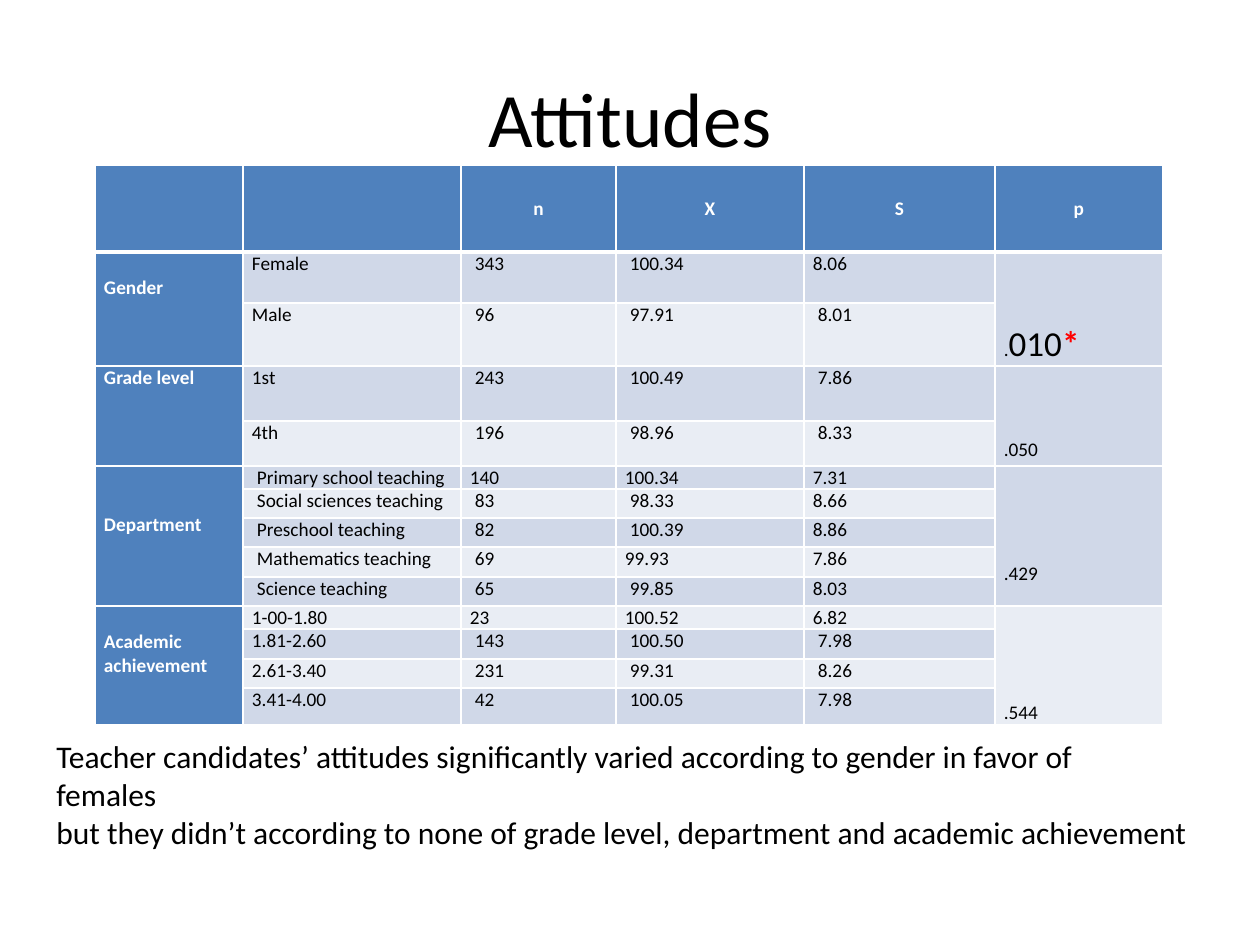
from typing import NamedTuple

from lxml.etree import SubElement
from pptx import Presentation
from pptx.dml.color import RGBColor
from pptx.enum.text import MSO_ANCHOR as Anchor, PP_ALIGN as Align
from pptx.oxml.ns import qn
from pptx.util import Emu, Pt

PX_PER_INCH = 126
FONT = "Calibri"
BLACK, WHITE, RED = "000000", "FFFFFF", "FF0000"
HEADER_BLUE, BAND_DARK, BAND_LIGHT = "4F81BD", "D0D8E8", "E9EDF4"
CELL_MARGIN, INDENT = 9, 5

COLUMN_WIDTHS = [148, 218, 155, 188, 191, 168]
ROW_HEIGHTS = [87, 51, 63, 55, 45, 23, 29, 29, 30, 29, 23, 30, 29, 37]
HEADINGS = ["", "", "n", "X", "S", "p"]


class Run(NamedTuple):
    text: str
    size: int = 11
    color: str = BLACK
    bold: bool = False


class Entry(NamedTuple):
    """One data row; indented lists the positions of the values set in a little."""
    values: tuple
    indented: tuple


class Group(NamedTuple):
    label: str
    label_top: int
    p_value: list
    p_bottom: int
    entries: list


GROUPS = [
    Group("Gender", 24, [Run("."), Run("010", 20), Run("*", 20, RED, True)], 0, [
        Entry(("Female", "343", "100.34", "8.06"), (1, 2)),
        Entry(("Male", "96", "97.91", "8.01"), (1, 2, 3)),
    ]),
    Group("Grade level", 0, [Run(".050")], 4, [
        Entry(("1st", "243", "100.49", "7.86"), (1, 2, 3)),
        Entry(("4th", "196", "98.96", "8.33"), (1, 2, 3)),
    ]),
    Group("Department", 47, [Run(".429")], 20, [
        Entry(("Primary school teaching", "140", "100.34", "7.31"), (0,)),
        Entry(("Social sciences teaching", "83", "98.33", "8.66"), (0, 1, 2)),
        Entry(("Preschool teaching", "82", "100.39", "8.86"), (0, 1, 2)),
        Entry(("Mathematics teaching", "69", "99.93", "7.86"), (0, 1)),
        Entry(("Science teaching", "65", "99.85", "8.03"), (0, 1, 2)),
    ]),
    Group("Academic achievement", 24, [Run(".544")], 0, [
        Entry(("1-00-1.80", "23", "100.52", "6.82"), ()),
        Entry(("1.81-2.60", "143", "100.50", "7.98"), (1, 2, 3)),
        Entry(("2.61-3.40", "231", "99.31", "8.26"), (1, 2, 3)),
        Entry(("3.41-4.00", "42", "100.05", "7.98"), (1, 2, 3)),
    ]),
]

CONCLUSION = [
    "Teacher candidates’ attitudes significantly varied according to gender in favor of",
    "females",
    "but they didn’t according to none of grade level, department and academic achievement",
]


def px(length: int) -> Emu:
    return Emu(round(length * 914400 / PX_PER_INCH))


def rgb(color: str) -> RGBColor:
    return RGBColor.from_string(color)


def add_runs(paragraph, runs: list) -> None:
    for item in runs:
        run = paragraph.add_run()
        run.text = item.text
        run.font.name = FONT
        run.font.size = Pt(item.size)
        run.font.bold = item.bold
        run.font.color.rgb = rgb(item.color)


def add_text(slide, box: tuple, lines: list, size: int, align, anchor, wrap: bool) -> None:
    frame = slide.shapes.add_textbox(*map(px, box)).text_frame
    frame.word_wrap = wrap
    frame.vertical_anchor = anchor
    for index, line in enumerate(lines):
        paragraph = frame.add_paragraph() if index else frame.paragraphs[0]
        paragraph.alignment = align
        add_runs(paragraph, [Run(line, size)])


def style_cell(cell, fill: str, bottom_width: int = 1) -> None:
    """Set margins, white borders and fill; the borders must precede the fill."""
    cell.margin_left = cell.margin_right = px(CELL_MARGIN)
    cell.margin_top = cell.margin_bottom = 0
    properties = cell._tc.get_or_add_tcPr()
    for side, width in (("L", 1), ("R", 1), ("T", 1), ("B", bottom_width)):
        line = SubElement(properties, qn(f"a:ln{side}"), w=str(Pt(width)))
        solid = SubElement(line, qn("a:solidFill"))
        SubElement(solid, qn("a:srgbClr"), val=WHITE)
    cell.fill.solid()
    cell.fill.fore_color.rgb = rgb(fill)


def fill_header(table) -> None:
    for column, heading in enumerate(HEADINGS):
        cell = table.cell(0, column)
        style_cell(cell, HEADER_BLUE, bottom_width=3)
        cell.vertical_anchor = Anchor.MIDDLE
        if heading:
            paragraph = cell.text_frame.paragraphs[0]
            paragraph.alignment = Align.CENTER
            add_runs(paragraph, [Run(heading, color=WHITE, bold=True)])


def fill_group(table, group: Group, first: int) -> None:
    last_column = len(COLUMN_WIDTHS) - 1
    last = first + len(group.entries) - 1
    for row, entry in enumerate(group.entries, first):
        band = BAND_DARK if row % 2 else BAND_LIGHT
        for column in range(last_column + 1):
            style_cell(table.cell(row, column), band if column else HEADER_BLUE)
        for index, value in enumerate(entry.values):
            cell = table.cell(row, index + 1)
            if index in entry.indented:
                cell.margin_left = px(CELL_MARGIN + INDENT)
            add_runs(cell.text_frame.paragraphs[0], [Run(value)])

    for column in (0, last_column):
        table.cell(first, column).merge(table.cell(last, column))
    label, p_value = table.cell(first, 0), table.cell(first, last_column)
    label.margin_top = px(group.label_top)
    add_runs(label.text_frame.paragraphs[0], [Run(group.label, color=WHITE, bold=True)])
    p_value.vertical_anchor = Anchor.BOTTOM
    p_value.margin_bottom = px(group.p_bottom)
    add_runs(p_value.text_frame.paragraphs[0], group.p_value)


def add_attitude_table(slide) -> None:
    table = slide.shapes.add_table(
        len(ROW_HEIGHTS), len(COLUMN_WIDTHS), px(95), px(165),
        px(sum(COLUMN_WIDTHS)), px(sum(ROW_HEIGHTS))).table
    for column, width in zip(table.columns, COLUMN_WIDTHS):
        column.width = px(width)
    for row, height in zip(table.rows, ROW_HEIGHTS):
        row.height = px(height)
    fill_header(table)
    first = 1
    for group in GROUPS:
        fill_group(table, group, first)
        first += len(group.entries)


def main() -> None:
    presentation = Presentation()
    presentation.slide_width, presentation.slide_height = px(1260), px(945)
    slide = presentation.slides.add_slide(presentation.slide_layouts[6])
    add_text(slide, (63, 38, 1134, 158), ["Attitudes"], 44,
             Align.CENTER, Anchor.MIDDLE, wrap=True)
    add_attitude_table(slide)
    add_text(slide, (44, 731, 1163, 127), CONCLUSION, 18,
             Align.LEFT, Anchor.TOP, wrap=False)
    presentation.save("out.pptx")


if __name__ == "__main__":
    main()
